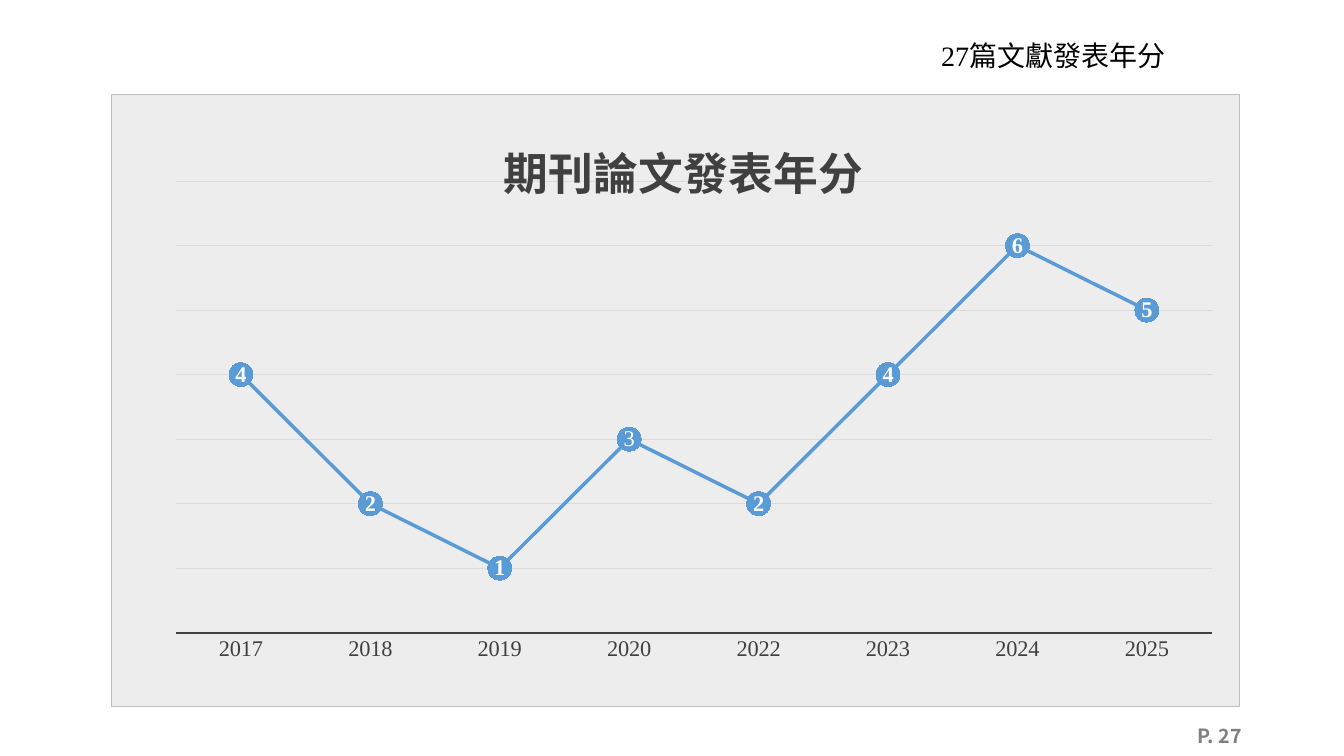
import pptx
import pptx.chart.data
import pptx.dml.color
import pptx.enum.chart
import pptx.enum.text
import pptx.oxml
import pptx.oxml.ns
import pptx.util

Pt = pptx.util.Pt
qn = pptx.oxml.ns.qn
enum = pptx.enum.chart
SERIF = "Times New Roman"
SANS = "Noto Sans CJK TC"
NS = pptx.oxml.ns.nsdecls("c", "a")
YEARS = ["2017", "2018", "2019", "2020", "2022", "2023", "2024", "2025"]
COUNTS = [4, 2, 1, 3, 2, 4, 6, 5]


def rgb(code):
    """Turn a hex string into a colour."""
    return pptx.dml.color.RGBColor.from_string(code)


def put(item, **values):
    """Set each named attribute of an item."""
    for name, value in values.items():
        setattr(item, name, value)


def style(font, size, code, name, bold=False):
    """Format a font."""
    put(font, size=Pt(size), name=name, bold=bold)
    font.color.rgb = rgb(code)


def asian(run, name):
    """Give a run its East Asian typeface."""
    face = pptx.oxml.parse_xml(f'<a:ea {NS} typeface="{name}"/>')
    run.font._element.find(qn("a:latin")).addnext(face)


def stroke(line, code, width):
    """Format a line."""
    line.color.rgb = rgb(code)
    line.width = Pt(width)


def place(node, index, **parts):
    """Give a chart element a manual layout."""
    for old in node.findall(qn("c:layout")):
        node.remove(old)
    tags = "".join(f'<c:{tag} val="{value}"/>' for tag, value in parts.items())
    xml = f"<c:layout {NS}><c:manualLayout>{tags}</c:manualLayout></c:layout>"
    node.insert(index, pptx.oxml.parse_xml(xml))


def write(shape, box, text, align, *look):
    """Write one line of text in a box."""
    put(shape, **dict(zip(("left", "top", "width", "height"), map(Pt, box))))
    frame = shape.text_frame
    put(frame, word_wrap=True, vertical_anchor=pptx.enum.text.MSO_ANCHOR.MIDDLE,
        auto_size=pptx.enum.text.MSO_AUTO_SIZE.NONE)
    para = frame.paragraphs[0]
    para.alignment = align
    run = para.add_run()
    run.text = text
    style(run.font, *look)
    asian(run, SANS)
    return para


def panel(chart, fill, edge):
    """Fill and outline the chart area."""
    xml = (f'<c:spPr {NS}><a:solidFill><a:srgbClr val="{fill}"/></a:solidFill>'
           f'<a:ln w="{Pt(0.75)}"><a:solidFill><a:srgbClr val="{edge}"/>'
           '</a:solidFill></a:ln></c:spPr>')
    chart.element.find(qn("c:chart")).addnext(pptx.oxml.parse_xml(xml))


def caption(chart):
    """Write the chart title."""
    chart.has_title = True
    title = chart.chart_title
    run = title.text_frame.paragraphs[0].add_run()
    run.text = "期刊論文發表年分"
    style(run.font, 32, "404040", "Noto Sans CJK SC", True)
    asian(run, "Noto Sans CJK SC")
    place(title._element, 1, xMode="edge", yMode="edge", x=0.34, y=0.05)


def axes(chart):
    """Format both axes and the grid."""
    years, scale = chart.category_axis, chart.value_axis
    none = enum.XL_TICK_MARK.NONE
    put(years, major_tick_mark=none, minor_tick_mark=none)
    style(years.tick_labels.font, 16, "404040", SERIF)
    stroke(years.format.line, "404040", 1.5)
    put(scale, visible=False, has_major_gridlines=True,
        minimum_scale=0, maximum_scale=7, major_unit=1)
    stroke(scale.major_gridlines.format.line, "DBDBDB", 0.75)


def curve(line):
    """Format the line, its markers and labels."""
    blue = "5B9BD5"
    line.smooth = False
    stroke(line.format.line, blue, 2.5)
    put(line.marker, style=enum.XL_MARKER_STYLE.CIRCLE, size=17)
    line.marker.format.fill.solid()
    line.marker.format.fill.fore_color.rgb = rgb(blue)
    stroke(line.marker.format.line, blue, 0.75)
    center = enum.XL_LABEL_POSITION.CENTER
    labels = line.data_labels
    put(labels, show_value=True, position=center)
    style(labels.font, 16, "FFFFFF", SERIF, True)
    label = line.points[YEARS.index("2020")].data_label
    run = label.text_frame.paragraphs[0].add_run()
    run.text = "3"
    style(run.font, 16, "FFFFFF", SERIF)
    label.position = center


def graph(slide, box):
    """Draw the chart of papers by year."""
    data = pptx.chart.data.CategoryChartData()
    data.categories = YEARS
    data.add_series("Series 1", COUNTS)
    kind = enum.XL_CHART_TYPE.LINE_MARKERS_STACKED
    chart = slide.shapes.add_chart(kind, *map(Pt, box), data).chart
    chart.has_legend = False
    style(chart.font, 10, "000000", "Calibri")
    panel(chart, "EDEDED", "BFBFBF")
    caption(chart)
    axes(chart)
    plot = chart.plots[0]
    plot.vary_by_categories = False
    curve(plot.series[0])
    area = chart.element.find(qn("c:chart")).find(qn("c:plotArea"))
    place(area, 0, layoutTarget="inner", xMode="edge", yMode="edge",
          x=0.057, y=0.142, w=0.918, h=0.738)


def main():
    """Build and save the slide."""
    deck = pptx.Presentation()
    put(deck, slide_width=Pt(960), slide_height=Pt(540))
    slide = deck.slides.add_slide(deck.slide_layouts[5])
    align = pptx.enum.text.PP_ALIGN
    head = write(slide.shapes.title, (648, 25.2, 208.8, 31), "27篇文獻發表年分",
                 align.CENTER, 20, "000000", SERIF)
    head.line_spacing = 0.9
    graph(slide, (79.6, 67, 806.4, 437.8))
    foot = slide.shapes.add_textbox(0, 0, 0, 0)
    write(foot, (678.2, 511.2, 216, 28.8), "P. 27", align.RIGHT,
          14, "808080", SANS, True)
    deck.save("out.pptx")


if __name__ == "__main__":
    main()
